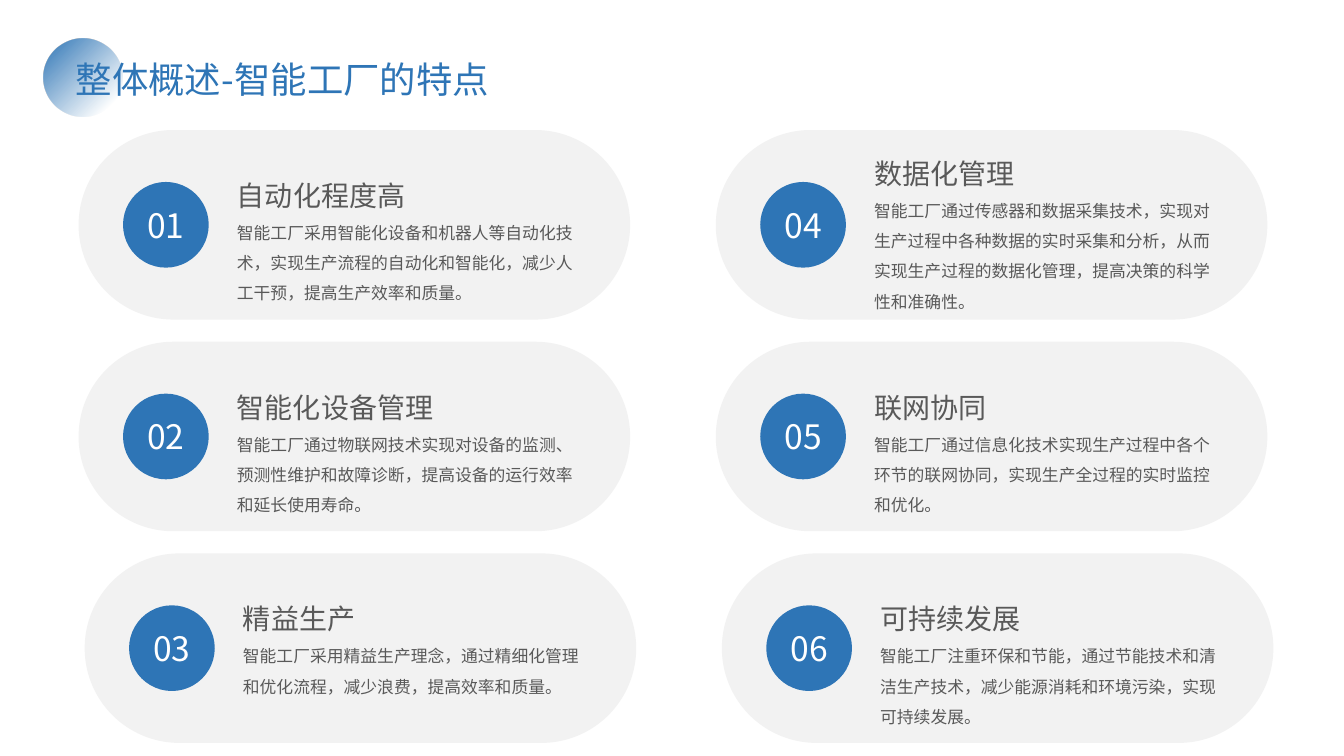
from lxml import etree
from pptx import Presentation
from pptx.dml.color import RGBColor
from pptx.enum.shapes import MSO_SHAPE
from pptx.enum.text import MSO_ANCHOR, MSO_AUTO_SIZE, PP_ALIGN
from pptx.oxml import parse_xml
from pptx.oxml.ns import nsdecls, qn
from pptx.util import Inches, Pt

PILL, CIRCLE = MSO_SHAPE.ROUNDED_RECTANGLE, MSO_SHAPE.OVAL
TOP, MIDDLE = MSO_ANCHOR.TOP, MSO_ANCHOR.MIDDLE
LEFT, CENTER = PP_ALIGN.LEFT, PP_ALIGN.CENTER
GROW, FIXED = MSO_AUTO_SIZE.SHAPE_TO_FIT_TEXT, MSO_AUTO_SIZE.NONE
TITLE_ONLY = 5

THEME = {
    "font": "Noto Sans CJK SC",
    "blue": "2E75B6", "card": "F2F2F2", "text": "595959", "white": "FFFFFF",
    "title": 26, "number": 24, "heading": 20, "body": 12,
}

# Card grid, in inches
GRID_LEFT, GRID_TOP = 0.78, 1.29
COLUMN_PITCH, ROW_PITCH = 6.32, 2.1
ROWS = 3
LAST_ROW_INDENT = 0.06
CARD_WIDTH, CARD_HEIGHT = 5.47, 1.88
BADGE = 0.85
NUMBER_WIDTH, NUMBER_HEIGHT = 0.56, 0.43
TEXT_INDENT, TEXT_WIDTH = 1.57, 3.46
HEADING_WIDTH, HEADING_HEIGHT = 1.92, 0.34
LINE_HEIGHT = 0.3

# Heading, body, lines of body text, offset of the heading from the card's top
FEATURES = [
    ("自动化程度高", "智能工厂采用智能化设备和机器人等自动化技术，实现生产流程的自动化和智能化，"
     "减少人工干预，提高生产效率和质量。", 3, 0.48),
    ("智能化设备管理", "智能工厂通过物联网技术实现对设备的监测、预测性维护和故障诊断，"
     "提高设备的运行效率和延长使用寿命。", 3, 0.48),
    ("精益生产", "智能工厂采用精益生产理念，通过精细化管理和优化流程，减少浪费，"
     "提高效率和质量。", 2, 0.48),
    ("数据化管理", "智能工厂通过传感器和数据采集技术，实现对生产过程中各种数据的实时采集和分析，"
     "从而实现生产过程的数据化管理，提高决策的科学性和准确性。", 4, 0.26),
    ("联网协同", "智能工厂通过信息化技术实现生产过程中各个环节的联网协同，"
     "实现生产全过程的实时监控和优化。", 3, 0.48),
    ("可持续发展", "智能工厂注重环保和节能，通过节能技术和清洁生产技术，减少能源消耗和环境污染，"
     "实现可持续发展。", 3, 0.48),
]

presentation = Presentation()
presentation.slide_width, presentation.slide_height = Inches(13.33), Inches(7.5)
slide = presentation.slides.add_slide(presentation.slide_layouts[TITLE_ONLY])


def add_shape(kind, left, top, width, height, fill):
    shape = slide.shapes.add_shape(kind, Inches(left), Inches(top), Inches(width), Inches(height))
    shape.shadow.inherit = False
    shape.fill.solid()
    shape.fill.fore_color.rgb = RGBColor.from_string(THEME[fill])
    shape.line.fill.background()
    return shape


def write_text(text, left, top, width, height, style, color="text", shape=None, align=LEFT,
               anchor=TOP, auto_size=GROW, inset=0, line_spacing=None, space_before=None):
    """Write one paragraph into the given shape, or into a new text box.

    space_before is a percentage of the type size.
    """
    shape = shape or slide.shapes.add_textbox(0, 0, 0, 0)
    shape.left, shape.top = Inches(left), Inches(top)
    shape.width, shape.height = Inches(width), Inches(height)
    frame = shape.text_frame
    frame.word_wrap = True
    frame.auto_size = auto_size
    frame.vertical_anchor = anchor
    frame.margin_left = frame.margin_right = Inches(inset)
    frame.margin_top = frame.margin_bottom = Inches(inset / 2)
    paragraph = frame.paragraphs[0]
    paragraph.alignment = align
    if line_spacing:
        paragraph.line_spacing = line_spacing
    if space_before:
        paragraph.space_before = Pt(0)
        spacing = next(shape.element.iter(qn("a:spcBef")))
        spacing.remove(spacing[0])
        etree.SubElement(spacing, qn("a:spcPct"), val=str(space_before * 1000))
    run = paragraph.add_run()
    run.text = text
    font = run.font
    font.name, font.size = THEME["font"], Pt(THEME[style])
    font.color.rgb = RGBColor.from_string(THEME[color])
    latin = next(run.font._element.iter(qn("a:latin")))
    latin.addnext(parse_xml(f'<a:ea {nsdecls("a")} typeface="{THEME["font"]}"/>'))


title = slide.shapes.title
write_text("整体概述-智能工厂的特点", 0.65, 0.52, 5.17, 0.54, "title", "blue",
           shape=title, inset=0.1)

title_dot = add_shape(CIRCLE, 0.43, 0.38, 0.78, 0.78, "blue")
solid_fill = title_dot.element.spPr.find(qn("a:solidFill"))
solid_fill.addprevious(parse_xml(
    f'<a:gradFill {nsdecls("a")}><a:gsLst>'
    f'<a:gs pos="15000"><a:srgbClr val="{THEME["blue"]}"><a:alpha val="0"/></a:srgbClr></a:gs>'
    f'<a:gs pos="100000"><a:srgbClr val="{THEME["blue"]}"/></a:gs></a:gsLst>'
    '<a:path path="circle"><a:fillToRect l="100000" t="100000"/></a:path></a:gradFill>'))
title_dot.element.spPr.remove(solid_fill)
title.element.addprevious(title_dot.element)

for index, (heading, body, lines, heading_offset) in enumerate(FEATURES):
    column, row = divmod(index, ROWS)
    left = GRID_LEFT + column * COLUMN_PITCH + (LAST_ROW_INDENT if row == ROWS - 1 else 0)
    top = GRID_TOP + row * ROW_PITCH
    card = add_shape(PILL, left, top, CARD_WIDTH, CARD_HEIGHT, "card")
    card.adjustments[0] = 0.5

    badge_left, badge_top = left + 0.44, top + (CARD_HEIGHT - BADGE) / 2
    add_shape(CIRCLE, badge_left, badge_top, BADGE, BADGE, "blue")
    write_text(f"{index + 1:02}", badge_left + (BADGE - NUMBER_WIDTH) / 2,
               badge_top + (BADGE - NUMBER_HEIGHT) / 2, NUMBER_WIDTH, NUMBER_HEIGHT,
               "number", "white", align=CENTER, anchor=MIDDLE, auto_size=FIXED)

    text_left, heading_top = left + TEXT_INDENT, top + heading_offset
    heading_width = max(HEADING_WIDTH, len(heading) * 0.32)
    write_text(heading, text_left, heading_top, heading_width, HEADING_HEIGHT, "heading",
               space_before=20)
    write_text(body, text_left, heading_top + HEADING_HEIGHT, TEXT_WIDTH, lines * LINE_HEIGHT,
               "body", line_spacing=1.5)

presentation.save("out.pptx")
